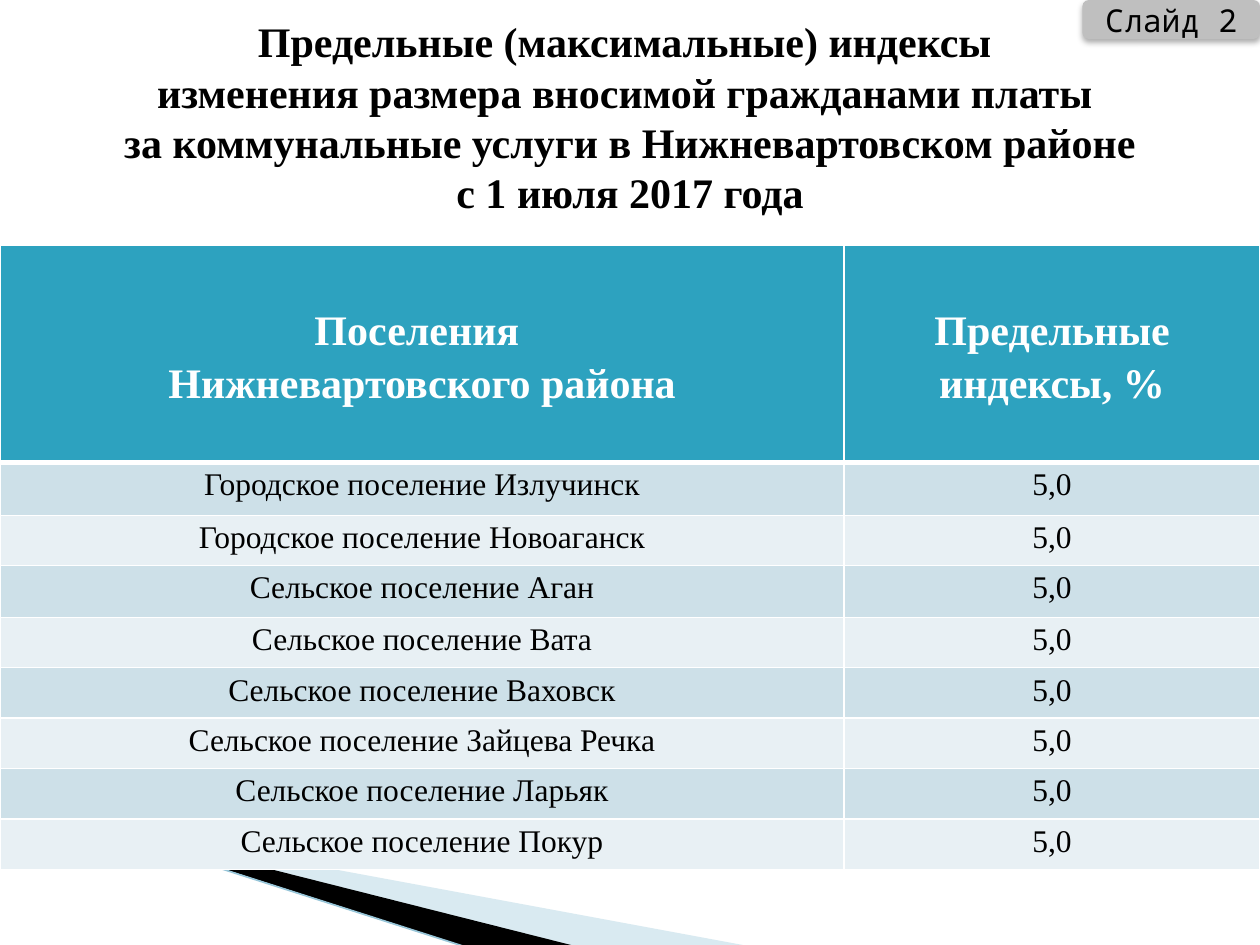
from lxml import etree
from pptx import Presentation
from pptx import util as u
from pptx.dml.color import RGBColor
from pptx.enum import shapes, text
from pptx.oxml import parse_xml
from pptx.oxml.ns import nsdecls, qn

WIDTH, HEIGHT = 10, 7.5
SERIF, MONO = "Times New Roman", "Noto Sans Mono"
BLACK, WHITE, TEAL = "000000", "FFFFFF", "2DA2BF"
BANDS = ["CDE0E8", "E8F0F4"]

TITLE = [
    "Предельные (максимальные) индексы ",
    "изменения размера вносимой гражданами платы ",
    "за коммунальные услуги в Нижневартовском районе",
    "с 1 июля 2017 года",
]
HEADER = ["Поселения \nНижневартовского района", "Предельные индексы, %"]
SETTLEMENTS = [
    "Городское поселение Излучинск",
    "Городское поселение Новоаганск",
    "Сельское поселение Аган",
    "Сельское поселение Вата",
    "Сельское поселение Ваховск",
    "Сельское поселение Зайцева Речка",
    "Сельское поселение Ларьяк",
    "Сельское поселение Покур",
]
INDEX = "5,0"
COLUMNS = [0.67 * WIDTH, 0.33 * WIDTH]
ROWS = [1.72, 0.42, 0.4, 0.41] + [0.4] * 5


def rgb(value):
    return RGBColor.from_string(value)


def box(left, top, width, height):
    return [u.Inches(v) for v in (left, top, width, height)]


def paint(fill, color):
    fill.solid()
    fill.fore_color.rgb = rgb(color)


def style_text(tf, size, font, color, bold=False, spacing=None):
    for p in tf.paragraphs:
        p.alignment = text.PP_ALIGN.CENTER
        if spacing:
            p.line_spacing = spacing
        p.font.size, p.font.name, p.font.bold = u.Pt(size), font, bold
        p.font.color.rgb = rgb(color)


def add_wedge(slide, points, color, opacity=100):
    (x, y), *rest = [(u.Inches(x), u.Inches(y)) for x, y in points]
    builder = slide.shapes.build_freeform(x, y)
    builder.add_line_segments(rest)
    sp = builder.convert_to_shape()
    sp.shadow.inherit = False
    paint(sp.fill, color)
    sp.line.fill.background()
    if opacity < 100:
        clr = sp.fill._xPr.find(qn("a:solidFill"))[0]
        etree.SubElement(clr, qn("a:alpha"), val=str(opacity * 1000))


def add_line(slide, start, end, color, width):
    ends = [u.Inches(v) for v in start + end]
    line = slide.shapes.add_connector(shapes.MSO_CONNECTOR.STRAIGHT, *ends)
    line.line.color.rgb = rgb(color)
    line.line.width = u.Pt(width)
    etree.SubElement(line._element.spPr, qn("a:effectLst"))


def set_title(slide):
    title = slide.shapes.title
    title.left, title.top, title.width, title.height = box(0.5, 0.3, 9, 1.25)
    tf = title.text_frame
    tf.text = "\v".join(TITLE)
    tf.auto_size = text.MSO_AUTO_SIZE.NONE
    tf.vertical_anchor = text.MSO_ANCHOR.MIDDLE
    style_text(tf, 24, SERIF, BLACK, bold=True)


def set_borders(cell, **widths):
    """Draw white borders; widths in points are keyed by side: L, R, T, B."""
    tc_pr = cell._tc.get_or_add_tcPr()
    for side, width in widths.items():
        tc_pr.append(parse_xml(
            f'<a:ln{side} {nsdecls("a")} w="{u.Pt(width)}"><a:solidFill>'
            f'<a:srgbClr val="{WHITE}"/></a:solidFill></a:ln{side}>'))


def fill_cell(cell, value, row):
    header = row == 0
    cell.text = value
    cell.margin_left = cell.margin_right = u.Inches(0.07)
    cell.margin_top = cell.margin_bottom = 0
    set_borders(cell, L=1, R=1, T=3 if row == 1 else 1, B=3 if header else 1)
    if header:
        cell.vertical_anchor = text.MSO_ANCHOR.MIDDLE
        paint(cell.fill, TEAL)
        style_text(cell.text_frame, 24, SERIF, WHITE, True, 1.15)
    else:
        paint(cell.fill, BANDS[(row - 1) % 2])
        style_text(cell.text_frame, 18, SERIF, BLACK, False, 1.15)


def add_index_table(slide):
    data = [HEADER] + [[name, INDEX] for name in SETTLEMENTS]
    table = slide.shapes.add_table(
        len(ROWS), len(COLUMNS), *box(0, 1.95, WIDTH, sum(ROWS))).table
    for column, width in zip(table.columns, COLUMNS):
        column.width = u.Inches(width)
    for r, (height, values) in enumerate(zip(ROWS, data)):
        table.rows[r].height = u.Inches(height)
        for c, value in enumerate(values):
            fill_cell(table.cell(r, c), value, r)


def add_slide_tag(slide, label):
    sp = slide.shapes.add_shape(
        shapes.MSO_SHAPE.ROUNDED_RECTANGLE, *box(WIDTH - 1.41, 0, 1.41, 0.31))
    paint(sp.fill, "BFBFBF")
    sp.line.fill.background()
    sp._element.spPr.append(parse_xml(
        f'<a:effectLst {nsdecls("a")}><a:outerShdw blurRad="{u.Pt(3.5)}" '
        f'dist="{u.Pt(2.2)}" dir="5400000" rotWithShape="0">'
        f'<a:srgbClr val="{BLACK}"><a:alpha val="32000"/></a:srgbClr>'
        '</a:outerShdw></a:effectLst>'))
    tf = sp.text_frame
    tf.text = label
    tf.vertical_anchor = text.MSO_ANCHOR.MIDDLE
    style_text(tf, 18, MONO, BLACK)


def main():
    prs = Presentation()
    prs.slide_width, prs.slide_height = u.Inches(WIDTH), u.Inches(HEIGHT)
    slide = prs.slides.add_slide(prs.slide_layouts[5])
    paint(slide.background.fill, WHITE)
    add_wedge(slide, [(0.55, 6.51), (5.95, 7.51), (4.56, 7.51), (0.55, 6.5)],
              "A0CBDC", opacity=40)
    add_wedge(slide, [(0.53, 6.49), (4.57, 7.51), (3.72, 7.52), (0.54, 6.5)],
              BLACK)
    add_line(slide, (-0.01, 6.33), (3.71, 7.52), "97C5D8", 0.95)
    set_title(slide)
    add_index_table(slide)
    add_slide_tag(slide, "Слайд 2")
    prs.save("out.pptx")


if __name__ == "__main__":
    main()
